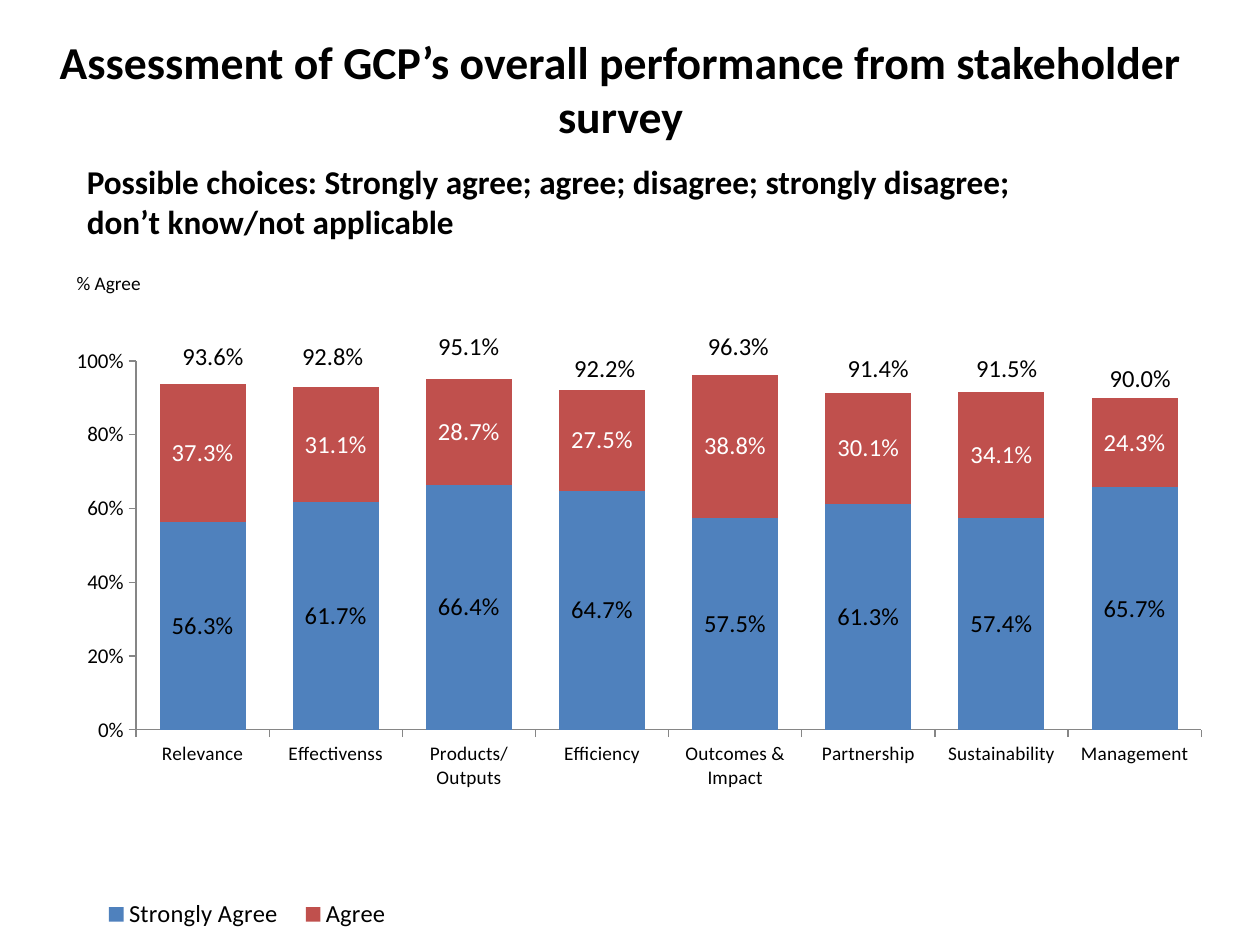
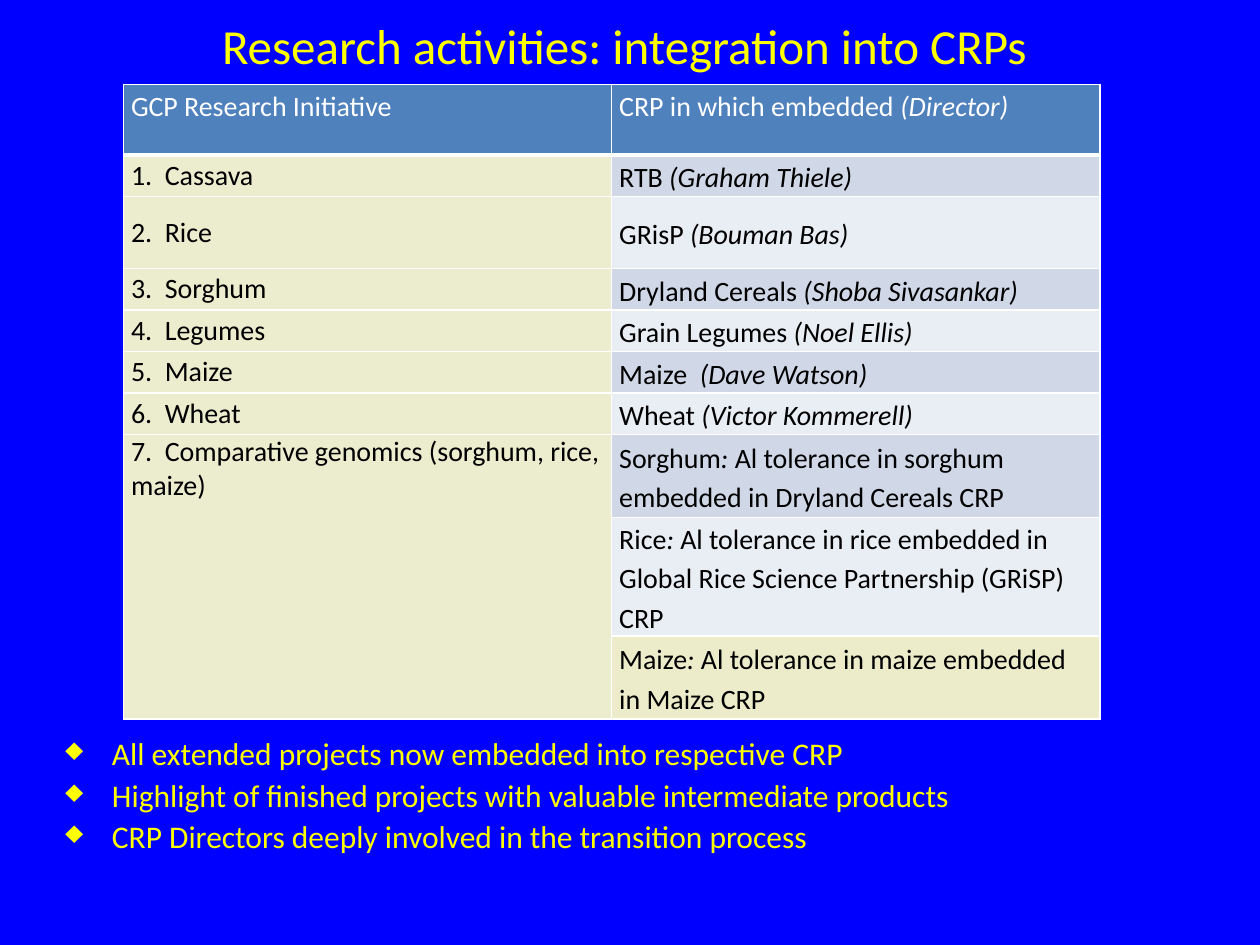
"""Build two slides: stakeholder survey results and integration of research into CRPs."""
from lxml import etree
from pptx import Presentation
from pptx.chart.data import CategoryChartData
from pptx.dml.color import RGBColor
from pptx.enum.chart import XL_CHART_TYPE, XL_LEGEND_POSITION, XL_TICK_MARK
from pptx.enum.text import MSO_ANCHOR, MSO_AUTO_SIZE, PP_ALIGN
from pptx.oxml.ns import qn
from pptx.util import Inches, Pt

STACKED = XL_CHART_TYPE.COLUMN_STACKED
LEGEND_BOTTOM = XL_LEGEND_POSITION.BOTTOM
TICK_OUT, TICK_NONE = XL_TICK_MARK.OUTSIDE, XL_TICK_MARK.NONE
TOP, MIDDLE = MSO_ANCHOR.TOP, MSO_ANCHOR.MIDDLE
LEFT, CENTER = PP_ALIGN.LEFT, PP_ALIGN.CENTER
NO_AUTOFIT = MSO_AUTO_SIZE.NONE

FONT = "Calibri"
BLACK = RGBColor(0x00, 0x00, 0x00)
WHITE = RGBColor(0xFF, 0xFF, 0xFF)
YELLOW = RGBColor(0xFF, 0xFF, 0x00)
DEEP_BLUE = RGBColor(0x00, 0x00, 0xFF)
STEEL = RGBColor(0x4F, 0x81, 0xBD)
BRICK = RGBColor(0xC0, 0x50, 0x4D)
GREY = RGBColor(0x86, 0x86, 0x86)
CREAM = RGBColor(0xEC, 0xEC, 0xCE)
LAST_CREAM = RGBColor(0xEC, 0xEC, 0xCB)
BANDS = (RGBColor(0xE9, 0xED, 0xF4), RGBColor(0xD0, 0xD8, 0xE8))

SURVEY_TITLE = "Assessment of GCP’s overall performance from stakeholder survey"
CHOICES = ["Possible choices: Strongly agree; agree; disagree; strongly disagree;",
           "don’t know/not applicable"]
AXIS_CAPTION = "% Agree"
# criterion, strongly agree, agree, left and top of the total
SURVEY = [
    ("Relevance", 0.563, 0.373, 1.22, 2.66),
    ("Effectivenss", 0.617, 0.311, 2.17, 2.66),
    ("Products/Outputs", 0.664, 0.287, 3.25, 2.58),
    ("Efficiency", 0.647, 0.275, 4.33, 2.75),
    ("Outcomes & Impact", 0.575, 0.388, 5.39, 2.58),
    ("Partnership", 0.613, 0.301, 6.5, 2.75),
    ("Sustainability", 0.574, 0.341, 7.52, 2.75),
    ("Management", 0.657, 0.243, 8.58, 2.83),
]
ANSWERS = [("Strongly Agree", STEEL, BLACK), ("Agree", BRICK, WHITE)]

CRP_TITLE = "Research activities: integration into CRPs"
# row height, initiative, CRP runs alternating upright and italic
CRP_ROWS = [
    (0.56, "GCP Research Initiative", ["CRP in which embedded ", "(Director)"]),
    (0.33, "1.  Cassava", ["RTB ", "(Graham Thiele)"]),
    (0.57, "2.  Rice", ["GRisP ", "(Bouman Bas)"]),
    (0.33, "3.  Sorghum", ["Dryland Cereals ", "(Shoba Sivasankar)"]),
    (0.33, "4.  Legumes", ["Grain Legumes ", "(Noel Ellis)"]),
    (0.33, "5.  Maize", ["Maize ", " (Dave Watson)"]),
    (0.33, "6.  Wheat", ["Wheat ", "(Victor Kommerell)"]),
    (0.66, "7.  Comparative genomics (sorghum, rice, maize)",
     ["Sorghum", ": ", "Al tolerance in sorghum embedded in Dryland Cereals CRP"]),
    (0.86, "", ["Rice", ": ", "Al tolerance in rice embedded in "
                "Global Rice Science Partnership (GRiSP) CRP"]),
    (0.66, "", ["Maize", ": ", "Al tolerance in maize embedded in Maize CRP"]),
]
GENOMICS_ROW = 7
OUTCOMES = ["All extended projects now embedded into respective CRP",
            "Highlight of finished projects with valuable intermediate products",
            "CRP Directors deeply involved in the transition process"]


def box(left, top, width, height):
    return [Inches(side) for side in (left, top, width, height)]


def style(font, size, color, bold=False):
    font.name, font.size, font.bold = FONT, Pt(size), bold
    font.color.rgb = color


def write(paragraph, runs, size, color, bold=False, align=LEFT):
    paragraph.alignment = align
    for position, text in enumerate(runs):
        run = paragraph.add_run()
        run.text = text
        style(run.font, size, color, bold)
        run.font.italic = position % 2 == 1


def add_slide(prs, background, title, place, size, color, bold=False):
    slide = prs.slides.add_slide(prs.slide_layouts[5])
    slide.background.fill.solid()
    slide.background.fill.fore_color.rgb = background
    heading = slide.shapes.title
    heading.left, heading.top, heading.width, heading.height = box(*place)
    frame = heading.text_frame
    frame.auto_size, frame.vertical_anchor = NO_AUTOFIT, MIDDLE
    write(frame.paragraphs[0], [title], size, color, bold, CENTER)
    return slide


def add_text(slide, place, lines, size, color, bold=False, align=LEFT, wrap=True):
    frame = slide.shapes.add_textbox(*box(*place)).text_frame
    frame.word_wrap = wrap
    for number, line in enumerate(lines):
        paragraph = frame.add_paragraph() if number else frame.paragraphs[0]
        write(paragraph, [line], size, color, bold, align)
    return frame


def set_layout(parent, index, shares, inner=False):
    for old in parent.findall(qn("c:layout")):
        parent.remove(old)
    layout = etree.Element(qn("c:layout"))
    manual = etree.SubElement(layout, qn("c:manualLayout"))
    settings = [("layoutTarget", "inner")] if inner else []
    settings += [("xMode", "edge"), ("yMode", "edge"), *zip("xywh", shares)]
    for tag, value in settings:
        etree.SubElement(manual, qn(f"c:{tag}")).set("val", str(value))
    parent.insert(index, layout)


def add_survey_chart(slide):
    data = CategoryChartData(number_format="0.0%")
    data.categories = [row[0] for row in SURVEY]
    for column, (answer, _, _) in enumerate(ANSWERS, 1):
        data.add_series(answer, [row[column] for row in SURVEY])
    chart = slide.shapes.add_chart(STACKED, *box(0.43, 2.67, 9.29, 4.88), data).chart
    style(chart.font, 18, BLACK)
    chart.has_title = False

    plot = chart.plots[0]
    plot.gap_width, plot.overlap, plot.vary_by_categories = 55, 100, False
    for series, (_, fill, ink) in zip(plot.series, ANSWERS):
        series.format.fill.solid()
        series.format.fill.fore_color.rgb = fill
        labels = series.data_labels
        labels.show_value = True
        labels.number_format, labels.number_format_is_linked = "0.0%", False
        style(labels.font, 14, ink)

    shares = chart.value_axis
    shares.minimum_scale, shares.maximum_scale, shares.major_unit = 0, 1, 0.2
    shares.has_major_gridlines = False
    shares.tick_labels.number_format = "0%"
    shares.tick_labels.number_format_is_linked = False
    for axis, size in ((chart.category_axis, 11), (shares, 12)):
        axis.major_tick_mark, axis.minor_tick_mark = TICK_OUT, TICK_NONE
        axis.format.line.color.rgb = GREY
        style(axis.tick_labels.font, size, BLACK)

    chart.has_legend = True
    chart.legend.position = LEGEND_BOTTOM
    chart.legend.include_in_layout = False
    style(chart.legend.font, 14, BLACK)
    chart_space = chart.element
    set_layout(chart_space.find(".//" + qn("c:plotArea")), 0, (0.07, 0.04, 0.91, 0.6), True)
    set_layout(chart_space.find(".//" + qn("c:legend")), 1, (0.03, 0.9, 0.27, 0.08))


def add_borders(cell, bottom):
    properties = cell._tc.get_or_add_tcPr()
    for side in "LRTB":
        width = bottom if side == "B" else 1
        line = etree.SubElement(properties, qn(f"a:ln{side}"), w=str(Pt(width)))
        solid = etree.SubElement(line, qn("a:solidFill"))
        etree.SubElement(solid, qn("a:srgbClr"), val=str(WHITE))


def add_crp_table(slide):
    heights = [row[0] for row in CRP_ROWS]
    last = len(CRP_ROWS) - 1
    table = slide.shapes.add_table(last + 1, 2, *box(0.98, 0.67, 7.75, sum(heights))).table
    for number, (height, initiative, crp) in enumerate(CRP_ROWS):
        table.rows[number].height = Inches(height)
        header = number == 0
        band = LAST_CREAM if number == last else BANDS[number % 2]
        for column, (runs, fill) in enumerate((([initiative], CREAM), (crp, band))):
            cell = table.cell(number, column)
            cell.margin_left = cell.margin_right = Inches(0.06)
            cell.margin_top = cell.margin_bottom = 0
            at_top = header or (number == GENOMICS_ROW and column == 0)
            cell.vertical_anchor = TOP if at_top else MIDDLE
            add_borders(cell, 3 if header else 1)
            cell.fill.solid()
            cell.fill.fore_color.rgb = STEEL if header else fill
            paragraph = cell.text_frame.paragraphs[0]
            if header or column:
                paragraph.line_spacing = 1.15
            if runs[0]:
                write(paragraph, runs, 16, WHITE if header else BLACK)
    table.cell(GENOMICS_ROW, 0).merge(table.cell(last, 0))


def add_bullet(paragraph):
    paragraph.space_before = Pt(2)
    properties = paragraph._p.get_or_add_pPr()
    properties.set("marL", str(Inches(0.37)))
    properties.set("indent", str(-Inches(0.37)))
    color = etree.SubElement(properties, qn("a:buClr"))
    etree.SubElement(color, qn("a:srgbClr"), val=str(YELLOW))
    etree.SubElement(properties, qn("a:buChar"), char="♦")


def build_survey(prs):
    slide = add_slide(prs, WHITE, SURVEY_TITLE, (0.12, 0.17, 9.61, 1.06), 26.1, BLACK, True)
    add_survey_chart(slide)
    add_text(slide, (0.51, 2.1, 0.94, 0.29), [AXIS_CAPTION], 11, BLACK)
    for _, strongly, agree, left, top in SURVEY:
        add_text(slide, (left, top, 0.94, 0.34), [f"{strongly + agree:.1%}"], 14, BLACK,
                 align=CENTER)
    add_text(slide, (0.59, 1.23, 9.09, 0.74), CHOICES, 19, BLACK, True, wrap=False)


def build_integration(prs):
    slide = add_slide(prs, DEEP_BLUE, CRP_TITLE, (0.33, 0.04, 9.25, 0.63), 28, YELLOW)
    add_crp_table(slide)
    outcomes = add_text(slide, (0.42, 5.78, 9.42, 1.07), OUTCOMES, 18, YELLOW)
    for paragraph in outcomes.paragraphs:
        add_bullet(paragraph)


def main():
    prs = Presentation()
    prs.slide_width, prs.slide_height = Inches(10), Inches(7.5)
    build_survey(prs)
    build_integration(prs)
    prs.save("out.pptx")


if __name__ == "__main__":
    main()
